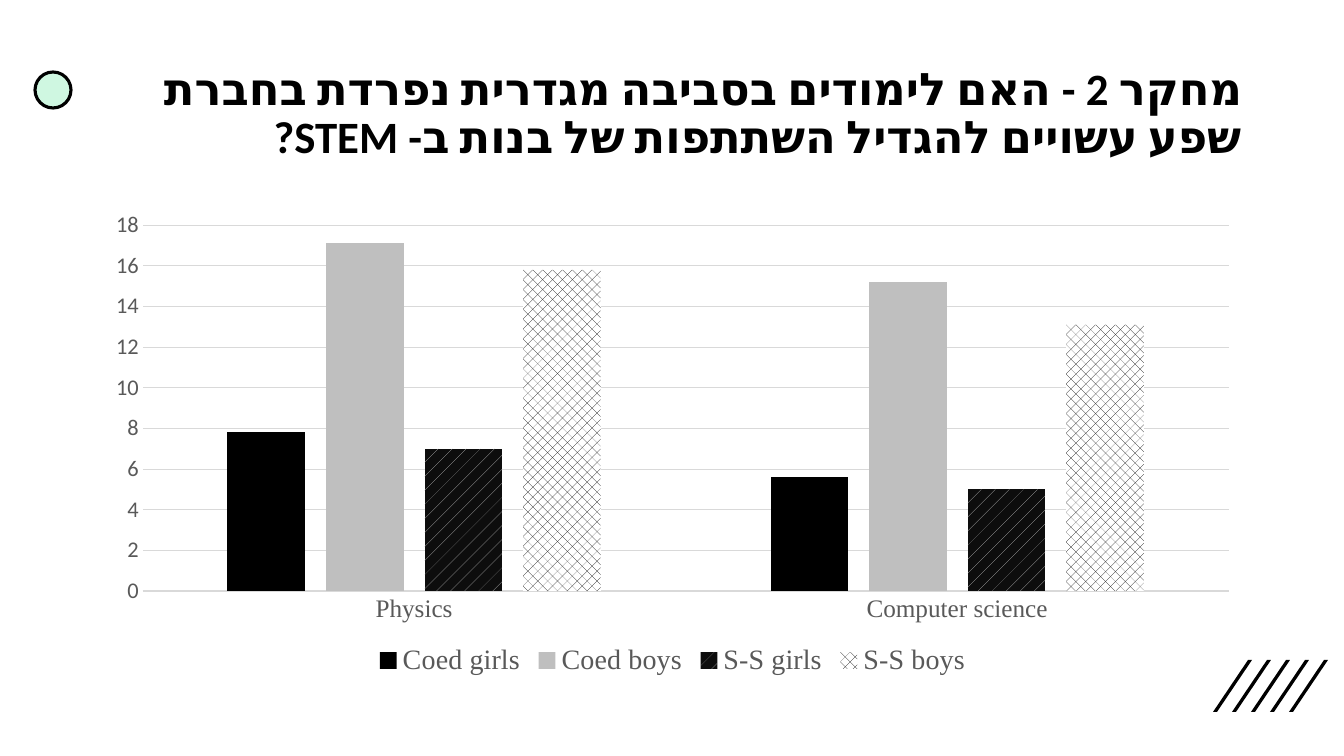
from pptx import Presentation
from pptx.chart.data import CategoryChartData
from pptx.dml.color import RGBColor
from pptx.enum.chart import XL_CHART_TYPE, XL_LEGEND_POSITION, XL_TICK_MARK
from pptx.enum.dml import MSO_PATTERN
from pptx.enum.shapes import MSO_SHAPE
from pptx.enum.text import MSO_ANCHOR, PP_ALIGN
from pptx.oxml.ns import qn
from pptx.util import Pt

SCALE = 914400 / 100.8


def px(*lengths):
    return [round(length * SCALE) for length in lengths]


def write_text(paragraph, text, font_name, size, color, bold=False):
    run = paragraph.add_run()
    run.text = text
    run.font.name = font_name
    run.font.size = Pt(size)
    run.font.bold = bold
    run.font.color.rgb = RGBColor.from_string(color)
    return run


presentation = Presentation()
presentation.slide_width, presentation.slide_height = px(1344, 756)
slide = presentation.slides.add_slide(presentation.slide_layouts[6])

for index in range(5):
    left = 1213 + 19 * index
    builder = slide.shapes.build_freeform(left + 4, 712, scale=SCALE)
    builder.add_line_segments([(left, 712), (left + 35, 660), (left + 39, 660)], close=True)
    stripe = builder.convert_to_shape()
    stripe.shadow.inherit = False
    stripe.fill.solid()
    stripe.fill.fore_color.rgb = RGBColor.from_string("000000")
    stripe.line.fill.background()

circle = slide.shapes.add_shape(MSO_SHAPE.OVAL, *px(35, 72, 36, 36))
circle.shadow.inherit = False
circle.fill.solid()
circle.fill.fore_color.rgb = RGBColor.from_string("CFF7E1")
circle.line.color.rgb = RGBColor.from_string("000000")
circle.line.width = Pt(2.25)

title = slide.shapes.add_textbox(*px(93, 42, 1159, 146))
title.text_frame.word_wrap = True
title.text_frame.vertical_anchor = MSO_ANCHOR.MIDDLE
paragraph = title.text_frame.paragraphs[0]
paragraph.alignment = PP_ALIGN.RIGHT
paragraph.line_spacing = 0.9
paragraph._p.get_or_add_pPr().set("rtl", "1")
title_run = write_text(
    paragraph,
    "מחקר 2 - האם לימודים בסביבה מגדרית נפרדת בחברת שפע עשויים להגדיל השתתפות של בנות ב- STEM?",
    "Calibri", 32, "000000", bold=True,
)
run_properties = title_run._r.get_or_add_rPr()
run_properties.set("lang", "he-IL")
complex_font = run_properties.makeelement(qn("a:cs"), {"typeface": "Calibri"})
run_properties.append(complex_font)

chart_data = CategoryChartData()
chart_data.categories = ["Physics", "Computer science"]
chart_data.add_series("Coed girls", [7.8, 5.6])
chart_data.add_series("Coed boys", [17.1, 15.2])
chart_data.add_series("S-S girls", [7, 5])
chart_data.add_series("S-S boys", [15.8, 13.1])
chart = slide.shapes.add_chart(
    XL_CHART_TYPE.COLUMN_CLUSTERED, *px(93, 202, 1159, 480), chart_data
).chart
chart.has_title = False
chart.font.name = "Calibri"
chart.font.size = Pt(10)
chart.font.color.rgb = RGBColor.from_string("000000")
chart.has_legend = True
chart.legend.position = XL_LEGEND_POSITION.BOTTOM
chart.legend.include_in_layout = False

category_axis, value_axis = chart.category_axis, chart.value_axis
for font, name, size in [
    (category_axis.tick_labels.font, "Times New Roman", 18),
    (value_axis.tick_labels.font, "Calibri", 16),
    (chart.legend.font, "Times New Roman", 20),
]:
    font.name = name
    font.size = Pt(size)
    font.color.rgb = RGBColor.from_string("595959")

for axis in (category_axis, value_axis):
    axis.major_tick_mark = XL_TICK_MARK.NONE
    axis.minor_tick_mark = XL_TICK_MARK.NONE
for line in (category_axis.format.line, value_axis.major_gridlines.format.line):
    line.color.rgb = RGBColor.from_string("D9D9D9")
    line.width = Pt(0.75)
value_axis.format.line.fill.background()
value_axis.minimum_scale = 0
value_axis.maximum_scale = 18
value_axis.major_unit = 2

plot = chart.plots[0]
plot.gap_width = 219
plot.overlap = -27
plot.vary_by_categories = False
fills = [
    (None, "000000", None),
    (None, "BFBFBF", None),
    (MSO_PATTERN.PERCENT_5, "BFBFBF", "0D0D0D"),
    (MSO_PATTERN.PERCENT_30, "0D0D0D", "FFFFFF"),
]
for series, (pattern, foreground, background) in zip(plot.series, fills):
    series.invert_if_negative = False
    fill = series.format.fill
    if pattern is None:
        fill.solid()
    else:
        fill.patterned()
        fill.pattern = pattern
        fill.back_color.rgb = RGBColor.from_string(background)
    fill.fore_color.rgb = RGBColor.from_string(foreground)

presentation.save("out.pptx")
